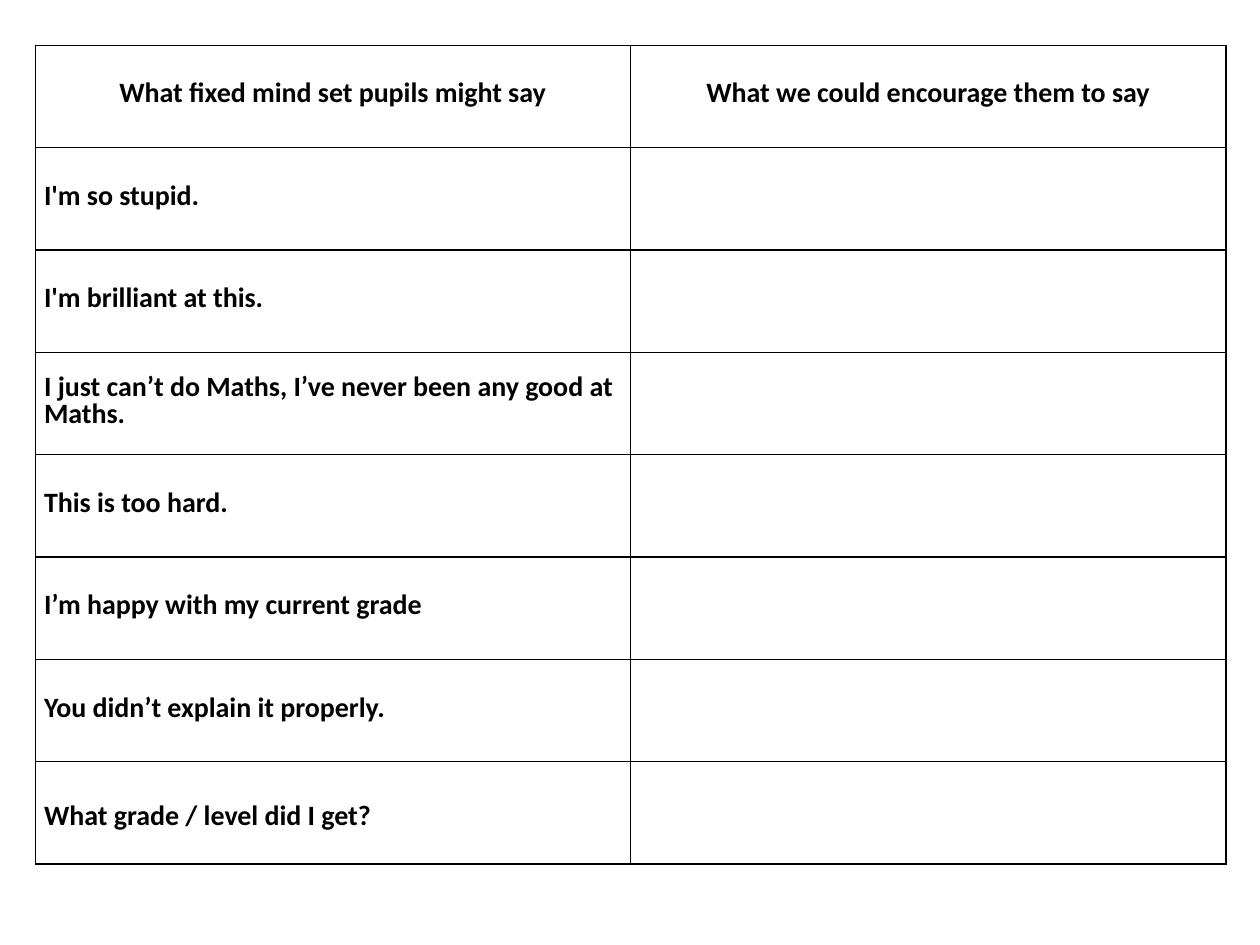
from lxml.etree import SubElement
from pptx import Presentation
from pptx.dml.color import RGBColor
from pptx.enum.text import MSO_ANCHOR, PP_ALIGN
from pptx.oxml.ns import qn
from pptx.util import Inches, Pt

COLORS = {"ink": "000000", "paper": "FFFFFF"}
HEADINGS = ["What fixed mind set pupils might say", "What we could encourage them to say"]
SAYINGS = [
    "I'm so stupid.",
    "I'm brilliant at this.",
    "I just can’t do Maths, I’ve never been any good at Maths.",
    "This is too hard.",
    "I’m happy with my current grade",
    "You didn’t explain it properly.",
    "What grade / level did I get?",
]
CELL_FORMAT = {
    "vertical_anchor": MSO_ANCHOR.MIDDLE,
    "margin_left": Inches(0.07),
    "margin_right": Inches(0.07),
    "margin_top": 0,
    "margin_bottom": 0,
}
FONT_FORMAT = {"name": "Calibri", "size": Pt(16), "bold": True}
SPACED = {"line_spacing": Pt(16), "space_before": Pt(7.5), "space_after": Pt(18)}
CENTRED = {**SPACED, "alignment": PP_ALIGN.CENTER}
LOOSE = {"line_spacing": 1.15}


def apply_format(target, values):
    for name, value in values.items():
        setattr(target, name, value)


def add_borders(cell):
    properties = cell._tc.get_or_add_tcPr()
    for position, side in enumerate(("lnL", "lnR", "lnT", "lnB")):
        border = properties.makeelement(qn(f"a:{side}"), {"w": str(Pt(1))})
        properties.insert(position, border)
        fill = SubElement(border, qn("a:solidFill"))
        SubElement(fill, qn("a:srgbClr"), {"val": COLORS["ink"]})


def fill_cell(cell, text, paragraph_format):
    apply_format(cell, CELL_FORMAT)
    cell.fill.solid()
    cell.fill.fore_color.rgb = RGBColor.from_string(COLORS["paper"])
    add_borders(cell)
    if text:
        paragraph = cell.text_frame.paragraphs[0]
        apply_format(paragraph, paragraph_format)
        run = paragraph.add_run()
        run.text = text
        apply_format(run.font, FONT_FORMAT)
        run.font.color.rgb = RGBColor.from_string(COLORS["ink"])


def add_mindset_table(slide, left, top, width, height):
    rows = [HEADINGS] + [[saying, ""] for saying in SAYINGS]
    table = slide.shapes.add_table(len(rows), len(HEADINGS), left, top, width, height).table
    formats = [CENTRED] + [SPACED] * (len(SAYINGS) - 1) + [LOOSE]
    for row_index, (row, paragraph_format) in enumerate(zip(rows, formats)):
        for column_index, text in enumerate(row):
            fill_cell(table.cell(row_index, column_index), text, paragraph_format)


def main():
    presentation = Presentation()
    presentation.slide_width = Inches(10)
    presentation.slide_height = Inches(7.5)
    slide = presentation.slides.add_slide(presentation.slide_layouts[6])
    add_mindset_table(slide, Inches(0.28), Inches(0.36), Inches(9.45), Inches(6.5))
    presentation.save("out.pptx")


if __name__ == "__main__":
    main()
